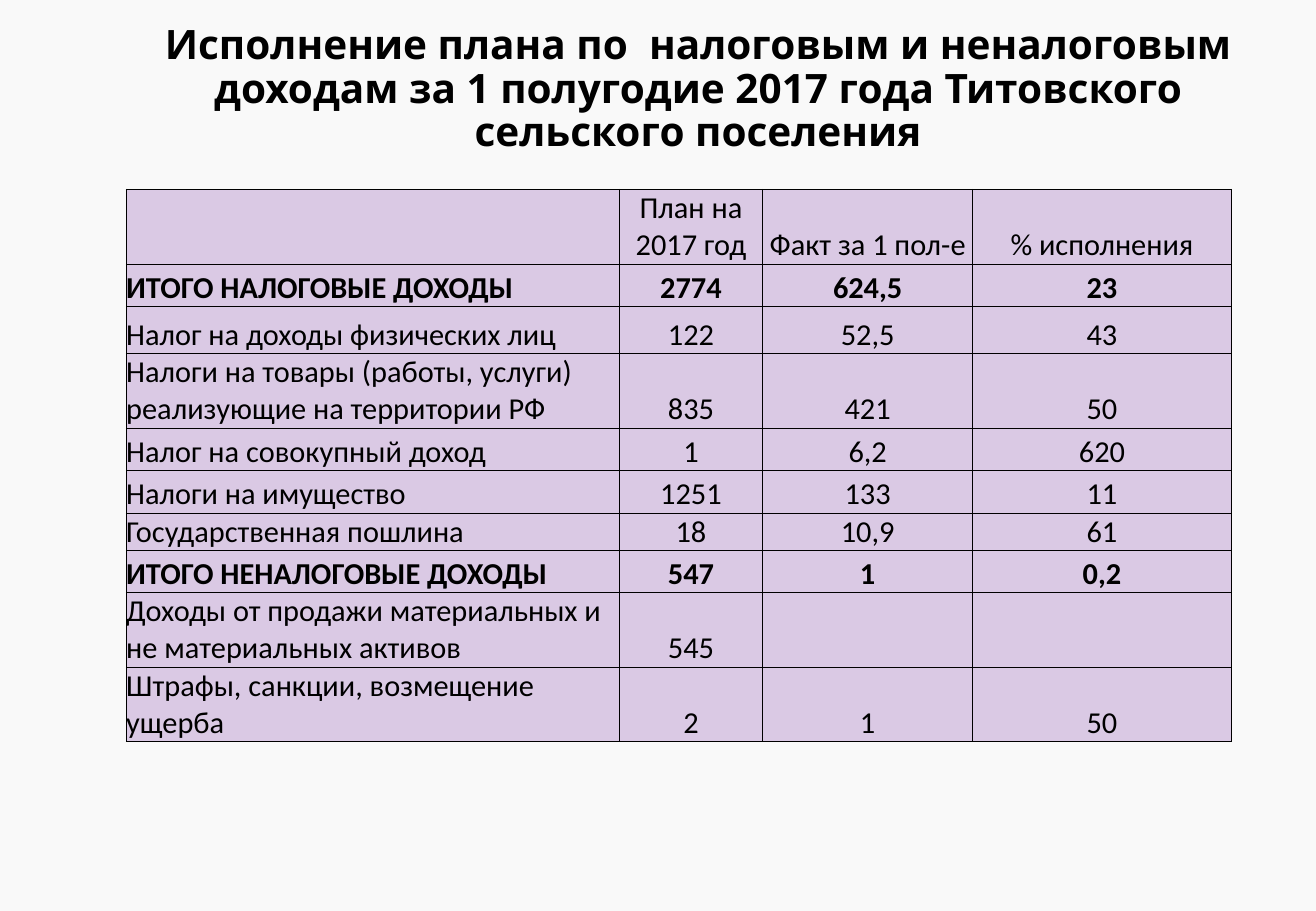
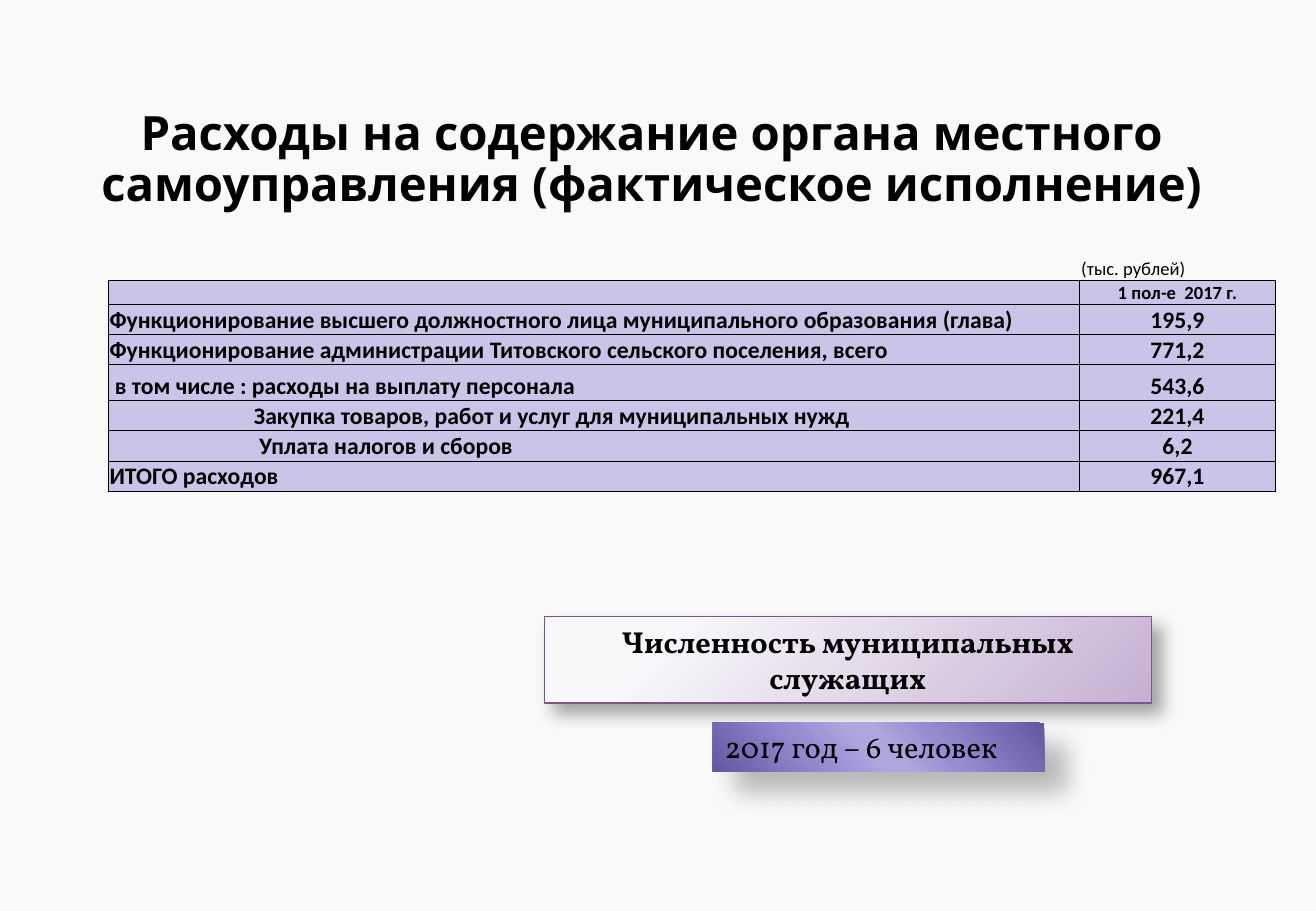
"""Build two budget slides: revenue performance and the cost of local government."""
import dataclasses

import lxml.etree
import pptx
import pptx.dml.color
import pptx.enum.shapes
import pptx.enum.text
import pptx.oxml
import pptx.oxml.ns
import pptx.slide
import pptx.table
import pptx.text.text
import pptx.util

Cm = pptx.util.Cm
Pt = pptx.util.Pt
qn = pptx.oxml.ns.qn
Align = pptx.enum.text.PP_ALIGN
Anchor = pptx.enum.text.MSO_ANCHOR


@dataclasses.dataclass(frozen=True)
class Theme:
    background: str = "F9F9F9"
    ink: str = "000000"
    revenue_fill: str = "DAC9E4"
    costs_fill: str = "CBC4E9"
    staff_line: str = "77568A"
    title_font: str = "Noto Sans"
    table_font: str = "Calibri"
    panel_font: str = "Vollkorn"
    revenue_title: float = 24
    costs_title: float = 28
    large: float = 18
    medium: float = 14
    small: float = 11
    border: float = 0.5
    title_spacing: float = 0.9


THEME = Theme()


@dataclasses.dataclass(frozen=True)
class Area:
    left: float
    top: float
    width: float
    height: float

    def lengths(self) -> tuple:
        return tuple(Cm(value) for value in dataclasses.astuple(self))


@dataclasses.dataclass(frozen=True)
class Row:
    cells: tuple[str, ...]
    height: float
    size: float = THEME.large
    bold: bool = False
    indent: float = 0
    framed: bool = True


@dataclasses.dataclass(frozen=True)
class Grid:
    left: float
    top: float
    columns: tuple[float, ...]
    rows: tuple[Row, ...]
    fill: str
    inset: float = 0


@dataclasses.dataclass(frozen=True)
class Shadow:
    opacity: int
    blur: float
    distance: float


@dataclasses.dataclass(frozen=True)
class Panel:
    text: str
    area: Area
    stops: tuple[tuple[int, str], ...]
    direction: str
    shadow: Shadow
    align: Align
    bold: bool = False
    line: str | None = None


SINGLE, DOUBLE = 0.89, 1.56
REVENUE = Grid(2.64, 3.96, (10.31, 3, 4.39, 5.41), (
    Row(("", "План на 2017 год", "Факт за 1 пол-е", "% исполнения"), DOUBLE),
    Row(("ИТОГО НАЛОГОВЫЕ ДОХОДЫ", "2774", "624,5", "23"), SINGLE, bold=True),
    Row(("Налог на доходы физических лиц", "122", "52,5", "43"), 0.98),
    Row(("Налоги на товары (работы, услуги) реализующие на территории РФ",
         "835", "421", "50"), DOUBLE),
    Row(("Налог на совокупный доход", "1", "6,2", "620"), SINGLE),
    Row(("Налоги на имущество", "1251", "133", "11"), SINGLE),
    Row(("Государственная пошлина", "18", "10,9", "61"), 0.77),
    Row(("ИТОГО НЕНАЛОГОВЫЕ ДОХОДЫ", "547", "1", "0,2"), SINGLE, bold=True),
    Row(("Доходы от продажи материальных и не материальных активов",
         "545", "", ""), DOUBLE),
    Row(("Штрафы, санкции, возмещение ущерба", "2", "1", "50"), DOUBLE),
), THEME.revenue_fill)


def cost(name: str, value: str, height: float = 0.63, indent: float = 0) -> Row:
    return Row((name, value), height, THEME.medium, True, indent)


COSTS = Grid(2.26, 5.36, (20.32, 4.09), (
    Row(("", "(тыс. рублей)"), 0.5, THEME.small, framed=False),
    Row(("", "1 пол-е  2017 г."), 0.5, THEME.small, True),
    cost("Функционирование высшего должностного лица муниципального образования (глава)",
         "195,9"),
    cost("Функционирование администрации Титовского сельского поселения, всего", "771,2"),
    cost("в том числе : расходы на выплату персонала", "543,6", 0.76, 0.11),
    cost("Закупка товаров, работ и услуг для муниципальных нужд", "221,4", indent=3.02),
    cost("Уплата налогов и сборов", "6,2", indent=3.13),
    cost("ИТОГО расходов", "967,1"),
), THEME.costs_fill, 0.03)

PANELS = (
    Panel("Численность муниципальных служащих", Area(11.38, 12.9, 12.7, 1.8),
          ((20, "F8F7FA"), (100, "C5B0D2")),
          '<a:path path="circle"><a:fillToRect l="-15000" t="-15000" '
          'r="115000" b="115000"/></a:path>',
          Shadow(35, 10.2, 8), Align.CENTER, True, THEME.staff_line),
    Panel("2017 год – 6 человек", Area(14.91, 15.11, 6.93, 1.02),
          ((0, "6556A1"), (33, "988CD1"), (47, "AFA6DD"),
           (53, "AFA6DD"), (68, "998DD2"), (100, "6556A1")),
          f'<a:lin ang="{139 * 60000}" scaled="0"/>',
          Shadow(26, 15, 18), Align.LEFT),
)


def color(value: str) -> pptx.dml.color.RGBColor:
    return pptx.dml.color.RGBColor.from_string(value)


def element(tag: str, attributes: str, content: str) -> lxml.etree.ElementBase:
    return pptx.oxml.parse_xml(
        f'<a:{tag} {pptx.oxml.ns.nsdecls("a")} {attributes}>{content}</a:{tag}>')


def style(para: pptx.text.text._Paragraph, font: str, size: float,
          bold: bool, align: Align) -> None:
    para.alignment = align
    for span in para.runs:
        span.font.name = font
        span.font.size = Pt(size)
        span.font.bold = bold
        span.font.color.rgb = color(THEME.ink)


def add_page(deck: pptx.presentation.Presentation, title: str,
             area: Area, size: float) -> pptx.slide.Slide:
    page = deck.slides.add_slide(deck.slide_layouts[6])
    page.background.fill.solid()
    page.background.fill.fore_color.rgb = color(THEME.background)
    frame = page.shapes.add_textbox(*area.lengths()).text_frame
    frame.word_wrap = True
    frame.vertical_anchor = Anchor.MIDDLE
    frame.text = title
    para = frame.paragraphs[0]
    para.line_spacing = THEME.title_spacing
    style(para, THEME.title_font, size, True, Align.CENTER)
    return page


def set_borders(cell: pptx.table._Cell, framed: bool) -> None:
    properties = cell._tc.get_or_add_tcPr()
    solid = f'<a:solidFill><a:srgbClr val="{THEME.ink}"/></a:solidFill>'
    for index, side in enumerate("LRTB"):
        visible = framed or side == "B"
        properties.insert(index, element(
            f"ln{side}", f'w="{Pt(THEME.border)}"', solid if visible else "<a:noFill/>"))


def fill_cell(cell: pptx.table._Cell, row: Row, column: int, grid: Grid) -> None:
    cell.margin_left = cell.margin_right = cell.margin_top = Cm(grid.inset)
    cell.margin_bottom = 0
    cell.vertical_anchor = Anchor.BOTTOM
    if row.framed:
        cell.fill.solid()
        cell.fill.fore_color.rgb = color(grid.fill)
    else:
        cell.fill.background()
    set_borders(cell, row.framed)
    para = cell.text_frame.paragraphs[0]
    para.text = row.cells[column]
    centred = row.framed and column > 0
    style(para, THEME.table_font, row.size, row.bold,
          Align.CENTER if centred else Align.LEFT)
    if not para.text:
        lxml.etree.SubElement(para._p, qn("a:endParaRPr"), sz=str(int(row.size * 100)))
    if column == 0 and row.indent:
        para._p.get_or_add_pPr().set("marL", str(Cm(row.indent)))


def add_grid(page: pptx.slide.Slide, grid: Grid) -> None:
    area = Area(grid.left, grid.top, sum(grid.columns), sum(row.height for row in grid.rows))
    table = page.shapes.add_table(len(grid.rows), len(grid.columns), *area.lengths()).table
    table.first_row = table.horz_banding = False
    table._tbl.tblPr.find(qn("a:tableStyleId")).text = "{2D5ABB26-0587-4C30-8999-92F81FD0307C}"
    for column, width in zip(table.columns, grid.columns):
        column.width = Cm(width)
    for index, row in enumerate(grid.rows):
        table.rows[index].height = Cm(row.height)
        for column in range(len(grid.columns)):
            fill_cell(table.cell(index, column), row, column, grid)


def add_panel(page: pptx.slide.Slide, panel: Panel) -> None:
    box = page.shapes.add_shape(pptx.enum.shapes.MSO_SHAPE.RECTANGLE, *panel.area.lengths())
    box.shadow.inherit = False
    if panel.line:
        box.line.color.rgb = color(panel.line)
        box.line.width = Pt(0.75)
    else:
        box.line.fill.background()
    stops = "".join(f'<a:gs pos="{place * 1000}"><a:srgbClr val="{tint}"/></a:gs>'
                    for place, tint in panel.stops)
    properties = box._element.spPr
    properties.find(qn("a:prstGeom")).addnext(element(
        "gradFill", 'rotWithShape="1"', f"<a:gsLst>{stops}</a:gsLst>{panel.direction}"))
    shadow = panel.shadow
    properties.find(qn("a:effectLst")).append(element(
        "outerShdw",
        f'blurRad="{Pt(shadow.blur)}" dist="{Pt(shadow.distance)}" '
        f'dir="{45 * 60000}" algn="tl" rotWithShape="0"',
        f'<a:srgbClr val="{THEME.ink}"><a:alpha val="{shadow.opacity * 1000}"/></a:srgbClr>'))
    frame = box.text_frame
    frame.word_wrap = True
    frame.auto_size = pptx.enum.text.MSO_AUTO_SIZE.SHAPE_TO_FIT_TEXT
    frame.vertical_anchor = Anchor.TOP
    frame.text = panel.text
    style(frame.paragraphs[0], THEME.panel_font, THEME.large, panel.bold, panel.align)


def main() -> None:
    deck = pptx.Presentation()
    deck.slide_width, deck.slide_height = Cm(27.52), Cm(19.05)
    revenue = add_page(
        deck, "Исполнение плана по  налоговым и неналоговым доходам "
        "за 1 полугодие 2017 года Титовского сельского поселения",
        Area(3.05, 0, 23.09, 3.76), THEME.revenue_title)
    add_grid(revenue, REVENUE)
    costs = add_page(
        deck, "Расходы на содержание органа местного самоуправления (фактическое исполнение)",
        Area(1.24, 1.78, 24.77, 3.18), THEME.costs_title)
    add_grid(costs, COSTS)
    for panel in PANELS:
        add_panel(costs, panel)
    deck.save("out.pptx")


if __name__ == "__main__":
    main()
